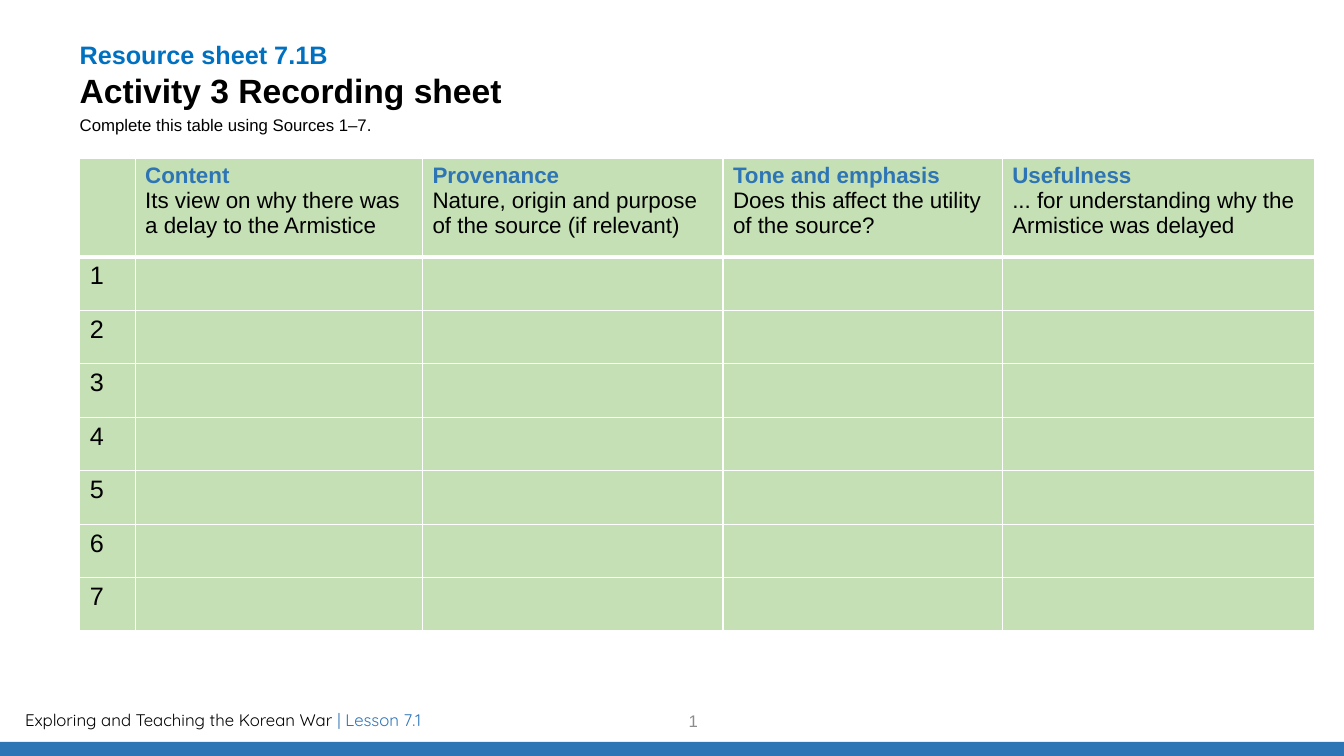
from lxml import etree
from pptx import Presentation
from pptx.dml.color import RGBColor
from pptx.enum.shapes import MSO_SHAPE
from pptx.enum.text import MSO_ANCHOR, MSO_AUTO_SIZE, PP_ALIGN
from pptx.oxml import parse_xml
from pptx.oxml.ns import nsdecls, qn
from pptx.util import Inches, Pt

BLACK = RGBColor(0x00, 0x00, 0x00)
WHITE = RGBColor(0xFF, 0xFF, 0xFF)
BLUE = RGBColor(0x2E, 0x75, 0xB6)
TITLE_BLUE = RGBColor(0x00, 0x70, 0xC0)
GREEN = RGBColor(0xC5, 0xE0, 0xB4)
GREY = RGBColor(0x8C, 0x8C, 0x8C)
LEFT, CENTER = PP_ALIGN.LEFT, PP_ALIGN.CENTER
TOP, MIDDLE = MSO_ANCHOR.TOP, MSO_ANCHOR.MIDDLE
NO_FIT = MSO_AUTO_SIZE.NONE
RECTANGLE = MSO_SHAPE.RECTANGLE

COLUMN_WIDTHS = [0.55, 2.85, 2.98, 2.77, 3.1]
HEADER_HEIGHT, ROW_HEIGHT, SOURCES = 0.98, 0.53, 7
HEADINGS = [
    ("Content", "Its view on why there was a delay to the Armistice"),
    ("Provenance", "Nature, origin and purpose of the source (if relevant)"),
    ("Tone and emphasis", "Does this affect the utility of the source?"),
    ("Usefulness", "... for understanding why the Armistice was delayed"),
]


class Sheet:
    font = "Arial"
    footer_font = "Quicksand"

    def __init__(self, prs):
        self.s = prs.slides.add_slide(prs.slide_layouts[1])

    def style(self, font, size, color, bold=False, name=None):
        font.name = name or self.font
        font.size = Pt(size)
        font.bold = bold
        font.color.rgb = color

    def lines(self, tf, lines, align=LEFT):
        for i, (text, size, color, bold) in enumerate(lines):
            p = tf.paragraphs[0] if i == 0 else tf.add_paragraph()
            p.text = text
            p.alignment = align
            p.space_before = Pt(0)
            self.style(p.font, size, color, bold)

    def placeholder(self, sp, box, lines):
        sp.left, sp.top, sp.width, sp.height = map(Inches, box)
        tf = sp.text_frame
        tf.margin_left = tf.margin_top = tf.margin_right = tf.margin_bottom = 0
        tf.vertical_anchor = TOP
        tf.auto_size = NO_FIT
        tf.word_wrap = True
        self.lines(tf, lines)
        return tf

    def title(self, box, lines):
        self.placeholder(self.s.shapes.title, box, lines)

    def body(self, box, lines):
        tf = self.placeholder(self.s.placeholders[1], box, lines)
        for p in tf.paragraphs:
            p.line_spacing = 0.9
            pPr = p._p.get_or_add_pPr()
            pPr.set("marL", "0")
            pPr.set("indent", "0")
            bullet = etree.Element(qn("a:buNone"))
            pPr.insert_element_before(bullet, "a:tabLst", "a:defRPr", "a:extLst")

    def text_box(self, box):
        tf = self.s.shapes.add_textbox(*map(Inches, box)).text_frame
        tf.word_wrap = True
        return tf

    def footer(self, box, runs):
        p = self.text_box(box).paragraphs[0]
        for text, color in runs:
            r = p.add_run()
            r.text = text
            self.style(r.font, 12, color, name=self.footer_font)

    def page_number(self, box, number):
        tf = self.text_box(box)
        tf.vertical_anchor = MIDDLE
        self.lines(tf, [(number, 12, GREY, False)], CENTER)

    def bar(self, box, color):
        sp = self.s.shapes.add_shape(RECTANGLE, *map(Inches, box))
        sp.shadow.inherit = False
        sp.fill.solid()
        sp.fill.fore_color.rgb = color
        sp.line.fill.background()

    def borders(self, cell, widths):
        tcPr = cell._tc.get_or_add_tcPr()
        for i, (side, width) in enumerate(zip("LRTB", widths)):
            tcPr.insert(i, parse_xml(
                f'<a:ln{side} {nsdecls("a")} w="{Pt(width)}"><a:solidFill>'
                f'<a:srgbClr val="{WHITE}"/></a:solidFill></a:ln{side}>'))

    def table(self, left, top, widths, heights, texts):
        frame = self.s.shapes.add_table(
            len(heights), len(widths), Inches(left), Inches(top),
            Inches(sum(widths)), Inches(sum(heights)))
        table = frame.table
        table.first_row = table.horz_banding = False
        for column, width in zip(table.columns, widths):
            column.width = Inches(width)
        for i, height in enumerate(heights):
            table.rows[i].height = Inches(height)
            for j in range(len(widths)):
                cell = table.cell(i, j)
                cell.fill.solid()
                cell.fill.fore_color.rgb = GREEN
                self.borders(cell, (1, 1, 3 if i == 1 else 1, 3 if i == 0 else 1))
                self.lines(cell.text_frame, texts.get((i, j), []))


def main():
    prs = Presentation()
    prs.slide_width, prs.slide_height = Inches(13.33), Inches(7.5)
    sheet = Sheet(prs)
    sheet.footer((0.15, 6.99, 7.82, 0.3), [
        ("Exploring and Teaching the Korean War ", BLACK),
        ("| Lesson 7.1", BLUE),
    ])
    sheet.bar((0, 7.36, 13.33, 0.15), BLUE)
    sheet.title((0.79, 0.39, 6.6, 0.71), [
        ("Resource sheet 7.1B", 18, TITLE_BLUE, True),
        ("Activity 3 Recording sheet", 24, BLACK, True),
    ])
    sheet.body((0.79, 1.16, 6.79, 0.4), [
        ("Complete this table using Sources 1–7.", 12, BLACK, False),
    ])
    texts = {(0, j): [(heading, 16, BLUE, True), (prompt, 16, BLACK, False)]
             for j, (heading, prompt) in enumerate(HEADINGS, 1)}
    for i in range(1, SOURCES + 1):
        texts[i, 0] = [(str(i), 18, BLACK, False)]
    heights = [HEADER_HEIGHT] + [ROW_HEIGHT] * SOURCES
    sheet.table(0.79, 1.57, COLUMN_WIDTHS, heights, texts)
    sheet.page_number((4.32, 6.95, 5.11, 0.4), "1")
    prs.save("out.pptx")


if __name__ == "__main__":
    main()
